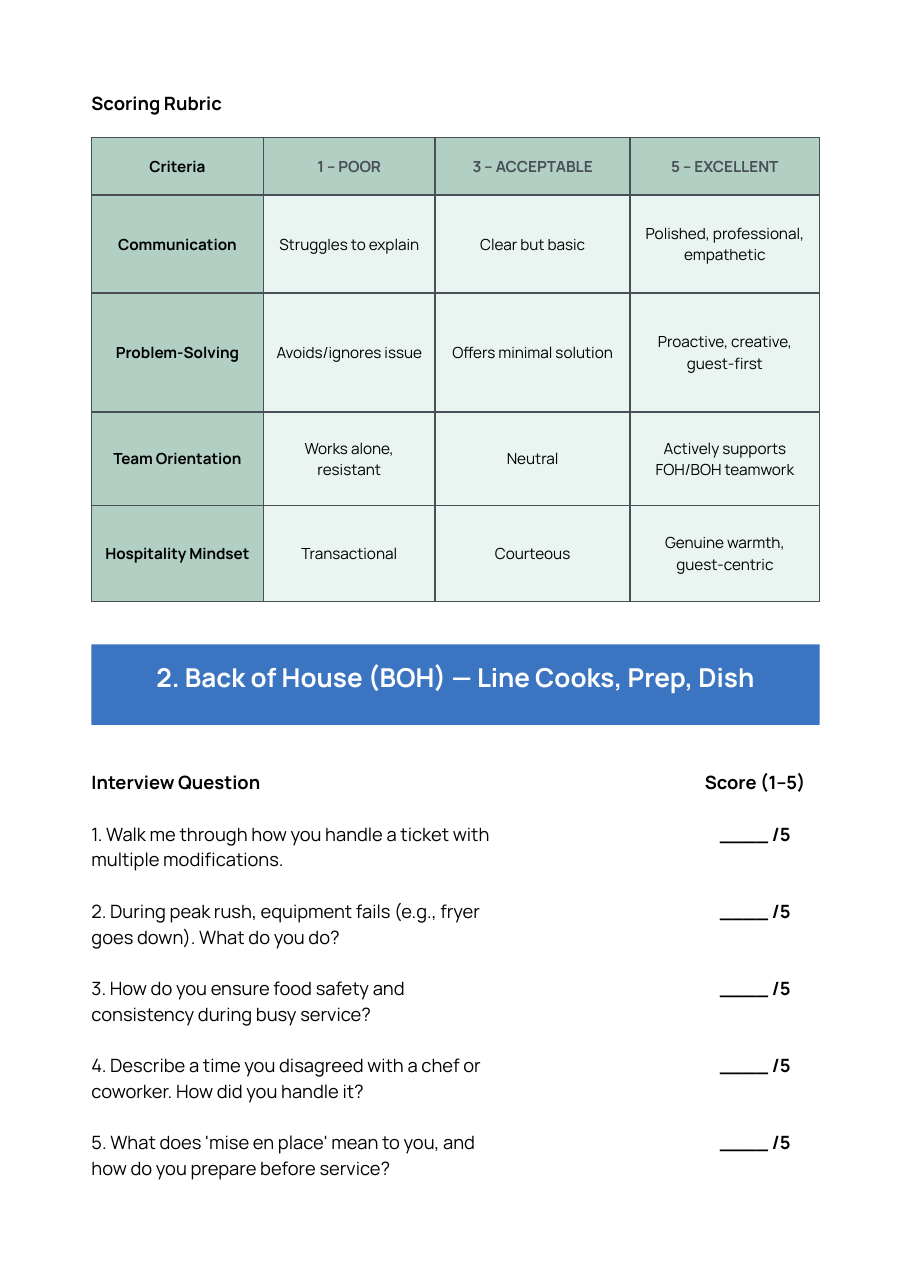
from dataclasses import dataclass

from lxml import etree
from pptx import Presentation
from pptx.dml.color import RGBColor
from pptx.enum.shapes import MSO_SHAPE
from pptx.enum.text import MSO_ANCHOR, MSO_AUTO_SIZE, PP_ALIGN
from pptx.oxml.ns import qn
from pptx.util import Inches, Pt

LEFT, CENTER = PP_ALIGN.LEFT, PP_ALIGN.CENTER
TOP, MIDDLE = MSO_ANCHOR.TOP, MSO_ANCHOR.MIDDLE
FIXED_SIZE = MSO_AUTO_SIZE.NONE
RECTANGLE = MSO_SHAPE.RECTANGLE
TWO_CONTENT = 3

RUBRIC_HEADING = "Scoring Rubric"
RUBRIC = [
    ("Criteria", "1 – POOR", "3 – ACCEPTABLE", "5 – EXCELLENT"),
    ("Communication", "Struggles to explain", "Clear but basic",
     "Polished, professional, empathetic"),
    ("Problem-Solving", "Avoids/ignores issue", "Offers minimal solution",
     "Proactive, creative, guest-first"),
    ("Team Orientation", "Works alone, resistant", "Neutral",
     "Actively supports FOH/BOH teamwork"),
    ("Hospitality Mindset", "Transactional", "Courteous",
     "Genuine warmth, guest-centric"),
]
SECTION_TITLE = "2. Back of House (BOH) — Line Cooks, Prep, Dish"
QUESTION_HEADING = "Interview Question"
QUESTIONS = [
    "1. Walk me through how you handle a ticket with multiple modifications.",
    "2. During peak rush, equipment fails (e.g., fryer goes down). What do you do?",
    "3. How do you ensure food safety and consistency during busy service?",
    "4. Describe a time you disagreed with a chef or coworker. How did you handle it?",
    "5. What does 'mise en place' mean to you, and how do you prepare before service?",
]
SCORE_HEADING = "Score (1–5)"
SCORE_BLANK = "____ /5"


@dataclass(frozen=True)
class Theme:
    font: str = "Manrope"
    ink: str = "000000"
    slate: str = "494F56"
    sage: str = "B2CFC4"
    mint: str = "EAF4F0"
    blue: str = "3B75C2"
    white: str = "FFFFFF"
    cell_size: float = 10
    body_size: float = 12
    title_size: float = 17
    leading: float = 1.4
    border: float = 1.03


THEME = Theme()
MARGIN, CONTENT_WIDTH = 0.83, 6.61
COLUMN_WIDTHS = [1.56, 1.56, 1.77, 1.72]
ROW_HEIGHTS = [0.52, 0.89, 1.08, 0.85, 0.87]
RUBRIC_TOP = 1.25
LIST_TOP = 6.97
QUESTION_WIDTH, SCORE_WIDTH = 3.77, 1.17
LINE = THEME.body_size * THEME.leading


def place(box, left, top, width, height):
    box.left, box.top = Inches(left), Inches(top)
    box.width, box.height = Inches(width), Inches(height)


def prepare(frame, inset=0, anchor=TOP):
    frame.word_wrap = True
    frame.auto_size = FIXED_SIZE
    frame.vertical_anchor = anchor
    frame.margin_left = frame.margin_right = Inches(inset)
    frame.margin_top = frame.margin_bottom = Inches(inset)


def write(paragraph, words, size, color=THEME.ink, bold=True, align=LEFT, before=0):
    paragraph.alignment = align
    paragraph.line_spacing = Pt(size * THEME.leading)
    paragraph.space_before = Pt(before)
    paragraph.space_after = Pt(0)
    run = paragraph.add_run()
    run.text = words
    run.font.name = THEME.font
    run.font.size = Pt(size)
    run.font.bold = bold
    run.font.color.rgb = RGBColor.from_string(color)


def write_list(placeholder, heading, entries, gap, bold, align):
    frame = placeholder.text_frame
    prepare(frame)
    for index, words in enumerate([heading, *entries]):
        paragraph = frame.paragraphs[0] if index == 0 else frame.add_paragraph()
        before = (0, LINE, gap)[min(index, 2)]
        write(paragraph, words, THEME.body_size, bold=bold or index == 0,
              align=align, before=before)
        properties = paragraph._p.get_or_add_pPr()
        properties.set("marL", "0")
        properties.set("indent", "0")
        etree.SubElement(properties, qn("a:buNone"))


def add_borders(cell):
    properties = cell._tc.get_or_add_tcPr()
    for side in ("lnL", "lnR", "lnT", "lnB"):
        border = etree.SubElement(properties, qn(f"a:{side}"), w=str(Pt(THEME.border)))
        fill = etree.SubElement(border, qn("a:solidFill"))
        etree.SubElement(fill, qn("a:srgbClr"), val=THEME.slate)


def add_rubric(slide):
    table = slide.shapes.add_table(
        len(RUBRIC), len(COLUMN_WIDTHS), Inches(MARGIN), Inches(RUBRIC_TOP),
        Inches(CONTENT_WIDTH), Inches(sum(ROW_HEIGHTS))).table
    table.first_row = table.horz_banding = False
    for column, width in zip(table.columns, COLUMN_WIDTHS):
        column.width = Inches(width)
    for row, height in zip(table.rows, ROW_HEIGHTS):
        row.height = Inches(height)
    for r, ratings in enumerate(RUBRIC):
        for c, words in enumerate(ratings):
            cell = table.cell(r, c)
            is_header = r == 0 or c == 0
            add_borders(cell)
            cell.fill.solid()
            cell.fill.fore_color.rgb = RGBColor.from_string(
                THEME.sage if is_header else THEME.mint)
            cell.vertical_anchor = MIDDLE
            cell.margin_left = cell.margin_right = Inches(0.09)
            cell.margin_top = cell.margin_bottom = Inches(0.09)
            write(cell.text_frame.paragraphs[0], words, THEME.cell_size,
                  color=THEME.slate if r == 0 and c > 0 else THEME.ink,
                  bold=is_header, align=CENTER)


def add_section_title(slide):
    title = slide.shapes.title
    place(title, MARGIN, 5.67, CONTENT_WIDTH, 0.9)
    prepare(title.text_frame, inset=0.06, anchor=MIDDLE)
    write(title.text_frame.paragraphs[0], SECTION_TITLE, THEME.title_size,
          color=THEME.white, align=CENTER)
    band = slide.shapes.add_shape(RECTANGLE, Inches(MARGIN), Inches(5.85),
                                  Inches(CONTENT_WIDTH), Inches(0.73))
    band.shadow.inherit = False
    band.fill.solid()
    band.fill.fore_color.rgb = RGBColor.from_string(THEME.blue)
    band.line.fill.background()
    title.element.addprevious(band.element)


def main():
    deck = Presentation()
    deck.slide_width, deck.slide_height = Inches(8.26), Inches(11.69)
    slide = deck.slides.add_slide(deck.slide_layouts[TWO_CONTENT])

    heading = slide.shapes.add_textbox(
        Inches(MARGIN), Inches(0.8), Inches(CONTENT_WIDTH), Inches(0.23))
    prepare(heading.text_frame)
    write(heading.text_frame.paragraphs[0], RUBRIC_HEADING, THEME.body_size)
    add_rubric(slide)
    add_section_title(slide)

    questions, scores = slide.placeholders[1], slide.placeholders[2]
    place(questions, MARGIN, LIST_TOP, QUESTION_WIDTH, 3.89)
    write_list(questions, QUESTION_HEADING, QUESTIONS, LINE, False, LEFT)
    place(scores, MARGIN + CONTENT_WIDTH - SCORE_WIDTH, LIST_TOP, SCORE_WIDTH, 3.66)
    write_list(scores, SCORE_HEADING, [SCORE_BLANK] * len(QUESTIONS),
               2 * LINE, True, CENTER)
    deck.save("out.pptx")


if __name__ == "__main__":
    main()
